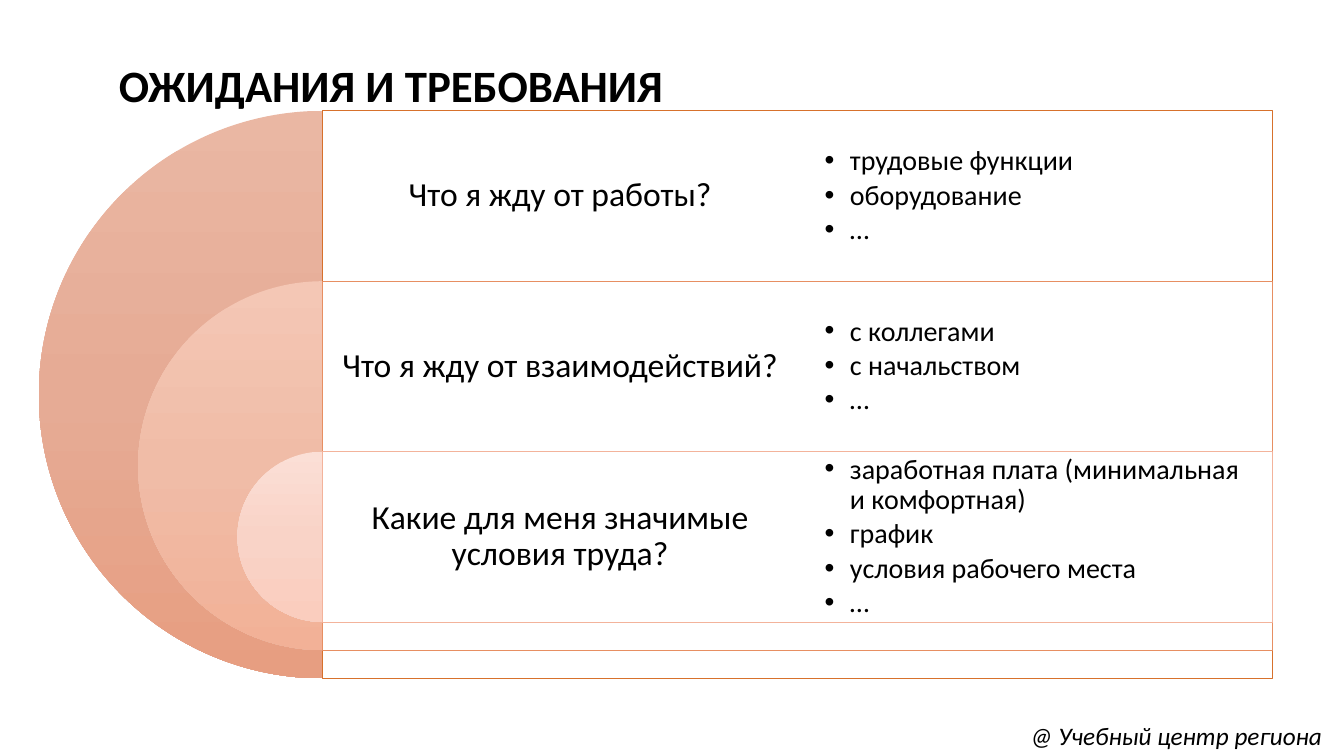
from copy import deepcopy

from lxml.etree import SubElement
from pptx import Presentation
from pptx.dml.color import RGBColor
from pptx.enum.shapes import MSO_SHAPE as Kind
from pptx.enum.text import MSO_ANCHOR as Anchor, MSO_AUTO_SIZE as Fit, PP_ALIGN as Align
from pptx.oxml.ns import qn
from pptx.util import Inches, Pt

COLORS = {"text": "000000", "panel": "FFFFFF"}
FONT = "Calibri"
ROW = 1.69  # row height, also the diameter of the innermost disc
STEP = 1.97  # growth of the diameter from one disc to the next

ROWS = [
    {"ask": "Что я жду от работы?",
     "items": ["трудовые функции", "оборудование", "…"],
     "disc": ["EAB7A3", "E6AB95", "E79E81"], "line": "D7712C"},
    {"ask": "Что я жду от взаимодействий?",
     "items": ["с коллегами", "с начальством", "…"],
     "disc": ["F4C7B5", "F0BCA7", "F2B197"], "line": "E78F62"},
    {"ask": "Какие для меня значимые условия труда?",
     "items": ["заработная плата (минимальная и комфортная)", "график",
               "условия рабочего места", "…"],
     "disc": ["FBDFD6", "F9D3C7", "FACDBE"], "line": "F3B39B"},
]


def rgb(code):
    return RGBColor.from_string(code)


def style(frame, size, bold=False, italic=False):
    for para in frame.paragraphs:
        for run in para.runs:
            font = run.font
            font.name, font.size = FONT, Pt(size)
            font.bold, font.italic = bold, italic
            font.color.rgb = rgb(COLORS["text"])


def add_text(slide, box, lines, size, inset):
    frame = slide.shapes.add_textbox(*map(Inches, box)).text_frame
    frame.text = "\n".join(lines)
    frame.word_wrap = True
    frame.vertical_anchor = Anchor.MIDDLE
    frame.margin_left = frame.margin_right = Inches(inset)
    frame.margin_top = frame.margin_bottom = Inches(inset)
    for para in frame.paragraphs:
        para.line_spacing = 0.9
    style(frame, size)
    return frame


def add_title(slide, box, text):
    title = slide.shapes.title
    title.left, title.top, title.width, title.height = map(Inches, box)
    frame = title.text_frame
    frame.text = text
    frame.vertical_anchor = Anchor.MIDDLE
    frame.paragraphs[0].alignment = Align.LEFT
    frame.paragraphs[0].line_spacing = 0.9
    style(frame, 32, bold=True)


def add_disc(slide, box, shades):
    """Left half of a disc with a vertical three-colour gradient."""
    disc = slide.shapes.add_shape(Kind.PIE, *map(Inches, box))
    disc.shadow.inherit = False
    disc.adjustments[0], disc.adjustments[1] = 54, 162
    disc.line.fill.background()
    disc.fill.gradient()
    disc.fill.gradient_angle = 270
    stops = disc._element.spPr.find(qn("a:gradFill")).find(qn("a:gsLst"))
    mid = deepcopy(stops[0])
    mid.set("pos", "50000")
    stops.insert(1, mid)
    for stop, shade in zip(disc.fill.gradient_stops, shades):
        stop.color.rgb = rgb(shade)


def add_panel(slide, box, line):
    panel = slide.shapes.add_shape(Kind.RECTANGLE, *map(Inches, box))
    panel.shadow.inherit = False
    panel.fill.solid()
    panel.fill.fore_color.rgb = rgb(COLORS["panel"])
    color = panel._element.spPr.find(qn("a:solidFill"))[0]
    SubElement(color, qn("a:alpha"), val="90000")
    panel.line.color.rgb = rgb(line)
    panel.line.width = Pt(0.5)


def add_list(slide, box, items):
    frame = add_text(slide, box, items, 20, 0.27)
    for para in frame.paragraphs:
        para.space_after = Pt(3)
        props = para._p.get_or_add_pPr()
        props.set("marL", str(Inches(0.25)))
        props.set("indent", str(Inches(-0.25)))
        SubElement(props, qn("a:buFont"), typeface="Arial")
        SubElement(props, qn("a:buChar"), char="•")


def add_target(slide, left, top, width):
    """Nested half discs with a panel per row; left is the discs' flat side."""
    half = width / 2
    for i, row in enumerate(ROWS):
        y = top + i * ROW
        size = ROW + (len(ROWS) - 1 - i) * STEP
        add_disc(slide, (left - size / 2, y, size, size), row["disc"])
        add_panel(slide, (left, y, width, size), row["line"])
        ask = add_text(slide, (left, y, half, ROW), [row["ask"]], 24, 0.1)
        ask.paragraphs[0].alignment = Align.CENTER
    for i, row in enumerate(ROWS):
        add_list(slide, (left + half, top + i * ROW, half, ROW), row["items"])


def add_credit(slide, box, text):
    frame = slide.shapes.add_textbox(*map(Inches, box)).text_frame
    frame.text = text
    frame.word_wrap = False
    frame.auto_size = Fit.SHAPE_TO_FIT_TEXT
    style(frame, 18, italic=True)


def main():
    deck = Presentation()
    deck.slide_width, deck.slide_height = Inches(13.33), Inches(7.5)
    slide = deck.slides.add_slide(deck.slide_layouts[5])
    add_title(slide, (1.08, 0.43, 11.5, 0.89), "ОЖИДАНИЯ И ТРЕБОВАНИЯ")
    add_credit(slide, (10.12, 7.1, 3.21, 0.4), "@ Учебный центр региона")
    add_target(slide, 3.2, 1.1, 9.42)
    deck.save("out.pptx")


if __name__ == "__main__":
    main()
